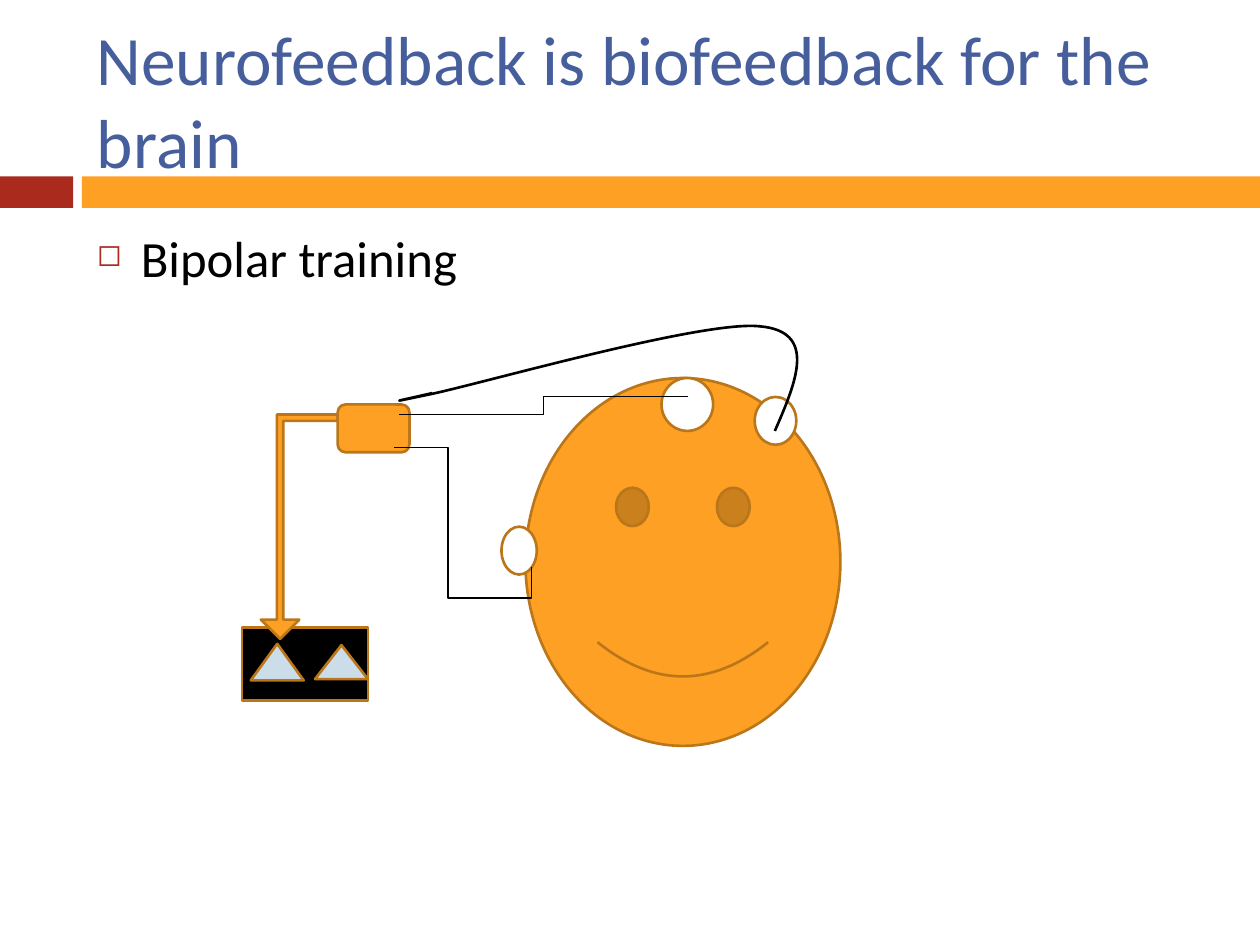
import pptx
import pptx.dml.color
import pptx.enum.shapes
import pptx.enum.text
import pptx.oxml
import pptx.oxml.ns
import pptx.util
from pptx.util import Inches

SHAPE = pptx.enum.shapes.MSO_SHAPE
ANCHOR = pptx.enum.text.MSO_ANCHOR
qn = pptx.oxml.ns.qn

RED, ORANGE, BROWN, BLUE = "AA2B1E", "FDA023", "BB761A", "465E9C"
BLACK, WHITE, PALE_BLUE = "000000", "FFFFFF", "CCDDEA"


def color(hex_string):
    return pptx.dml.color.RGBColor.from_string(hex_string)


def element(tag, **attributes):
    node = pptx.oxml.parse_xml(f"<a:{tag} {pptx.oxml.ns.nsdecls('a')}/>")
    for name, value in attributes.items():
        node.set(name, str(value))
    return node


class SlideBuilder:
    font = "Calibri"
    outline_width = 1.5
    wire_width = 0.79

    def __init__(self, slide):
        self.slide = slide

    def shape(self, kind, box, fill, outline=BROWN, adjustments=(), rotation=0):
        shape = self.slide.shapes.add_shape(kind, *map(Inches, box))
        shape.shadow.inherit = False
        shape.rotation = rotation
        shape.fill.solid()
        shape.fill.fore_color.rgb = color(fill)
        if outline:
            self.stroke(shape.line, outline, self.outline_width)
        else:
            shape.line.fill.background()
        for index, value in enumerate(adjustments):
            shape.adjustments[index] = value

    def stroke(self, line, hex_string, width):
        line.color.rgb = color(hex_string)
        line.width = pptx.util.Pt(width)

    def text(self, text, box, size, hex_string, anchor=ANCHOR.TOP):
        text_frame = self.slide.shapes.add_textbox(*map(Inches, box)).text_frame
        text_frame.word_wrap = True
        text_frame.vertical_anchor = anchor
        text_frame.text = text
        paragraph = text_frame.paragraphs[0]
        font = paragraph.runs[0].font
        font.name = self.font
        font.size = pptx.util.Pt(size)
        font.color.rgb = color(hex_string)
        return paragraph

    def bullet(self, paragraph, character, hex_string, percent, indent):
        properties = paragraph._p.get_or_add_pPr()
        properties.set("marL", str(Inches(indent)))
        properties.set("indent", str(-Inches(indent)))
        bullet_color = element("buClr")
        bullet_color.append(element("srgbClr", val=hex_string))
        properties.append(bullet_color)
        properties.append(element("buSzPct", val=percent * 1000))
        properties.append(element("buChar", char=character))

    def elbow(self, start, end, preset, adjustments):
        """Draw a bent wire; adjustments are fractions of its width and height."""
        connector = self.slide.shapes.add_connector(
            pptx.enum.shapes.MSO_CONNECTOR.ELBOW, *map(Inches, start + end))
        self.stroke(connector.line, BLACK, self.wire_width)
        properties = connector._element.spPr
        properties.append(element("effectLst"))
        geometry = properties.find(qn("a:prstGeom"))
        geometry.set("prst", preset)
        guides = geometry.find(qn("a:avLst"))
        for number, value in enumerate(adjustments, 1):
            guides.append(element("gd", name=f"adj{number}",
                                  fmla=f"val {round(value * 100000)}"))

    def curve(self, start, points):
        """Draw an open curve; every three points make one Bezier segment."""
        builder = self.slide.shapes.build_freeform(*map(Inches, start))
        builder.add_line_segments(
            [(Inches(x), Inches(y)) for x, y in points], close=False)
        shape = builder.convert_to_shape()
        shape.shadow.inherit = False
        shape.fill.background()
        self.stroke(shape.line, BLACK, self.outline_width)
        outline = next(shape._element.iter(qn("a:path")))
        segments = outline.findall(qn("a:lnTo"))
        for first in range(0, len(segments), 3):
            bezier = element("cubicBezTo")
            for segment in segments[first:first + 3]:
                bezier.append(segment[0])
                outline.remove(segment)
            outline.append(bezier)


def main():
    presentation = pptx.Presentation()
    presentation.slide_width = Inches(10)
    presentation.slide_height = Inches(7.5)
    builder = SlideBuilder(
        presentation.slides.add_slide(presentation.slide_layouts[6]))

    builder.shape(SHAPE.RECTANGLE, (0, 1.4, 0.58, 0.25), RED, outline=None)
    builder.shape(SHAPE.RECTANGLE, (0.65, 1.4, 9.35, 0.25), ORANGE, outline=None)
    builder.text("Neurofeedback is biofeedback for the brain",
                 (0.67, 0.25, 8.92, 1.08), 39.6, BLUE, ANCHOR.MIDDLE)
    topic = builder.text("Bipolar training", (0.67, 1.75, 8.92, 4.92), 29, BLACK)
    topic.space_before = pptx.util.Pt(7)
    builder.bullet(topic, "◻", RED, percent=60, indent=0.35)

    # Head, screen and electrodes
    builder.shape(SHAPE.SMILEY_FACE, (4.17, 3, 2.5, 2.92), ORANGE)
    builder.shape(SHAPE.RECTANGLE, (1.92, 4.98, 1, 0.58), BLACK)
    for electrode in ((3.98, 4.18, 0.28, 0.38), (5.99, 3.15, 0.33, 0.38),
                      (5.25, 3, 0.41, 0.42)):
        builder.shape(SHAPE.OVAL, electrode, WHITE)
    for screen_triangle in ((1.99, 5.11, 0.42, 0.29), (2.5, 5.12, 0.42, 0.27)):
        builder.shape(SHAPE.ISOSCELES_TRIANGLE, screen_triangle, PALE_BLUE)

    # Amplifier and its wires
    builder.shape(SHAPE.BENT_UP_ARROW, (2.07, 3.29, 0.61, 1.78), ORANGE,
                  adjustments=(0.082, 0.25, 0.25), rotation=180)
    builder.shape(SHAPE.ROUNDED_RECTANGLE, (2.68, 3.21, 0.57, 0.38), ORANGE)
    builder.elbow((3.13, 3.55), (4.22, 4.5), "bentConnector4", (0.39, 1.26))
    builder.elbow((3.17, 3.29), (5.46, 3.15), "bentConnector3", (0.5,))
    builder.curve((6.15, 3.42), [
        (6.32, 3.03), (6.49, 2.63), (6.03, 2.59),
        (5.58, 2.54), (3.84, 3.04), (3.41, 3.13),
        (2.98, 3.22), (3.21, 3.17), (3.43, 3.12)])

    presentation.save("out.pptx")


if __name__ == "__main__":
    main()
